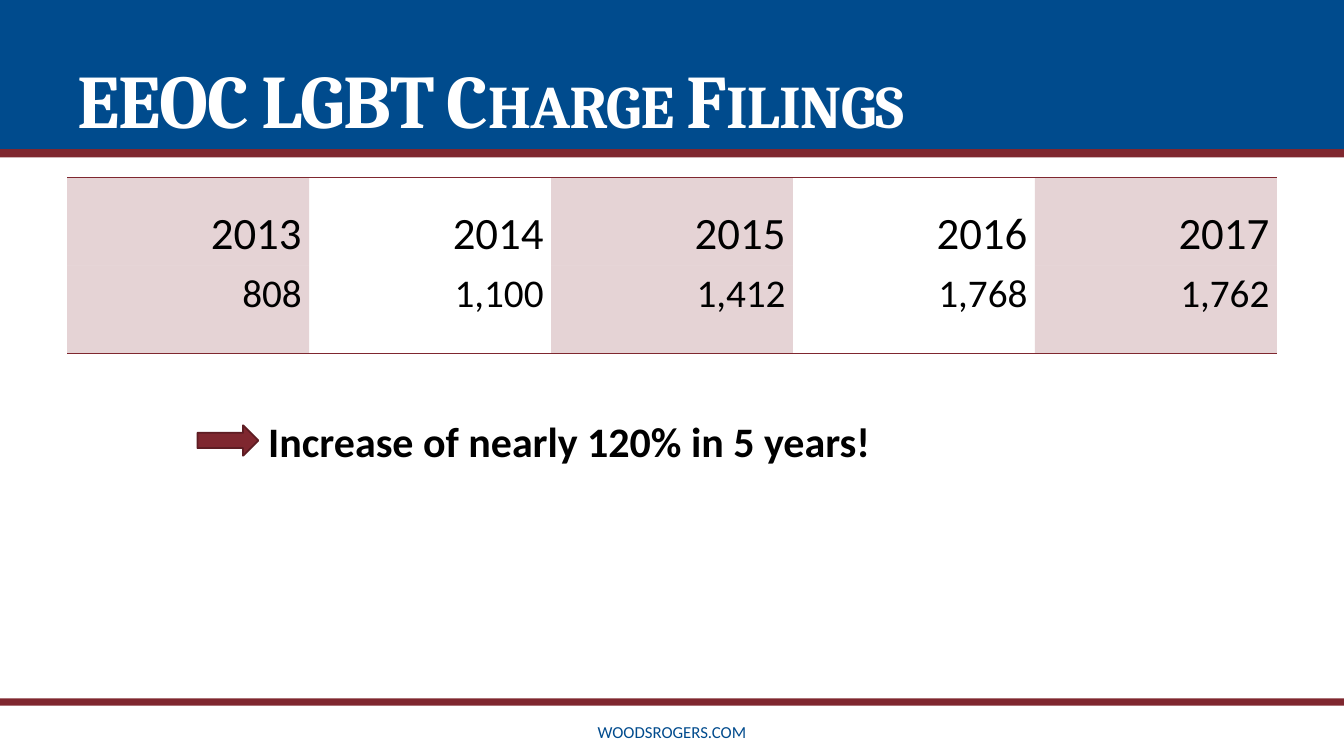
from lxml import etree
from pptx import Presentation
from pptx.dml.color import RGBColor
from pptx.enum.shapes import MSO_SHAPE as Shape
from pptx.enum.text import MSO_ANCHOR as Anchor, MSO_AUTO_SIZE as Fit, PP_ALIGN as Align
from pptx.oxml.ns import qn
from pptx.util import Emu, Pt

PX = 9525
WIDE, HIGH = 1280, 720
BLUE = RGBColor(0x00, 0x4B, 0x8D)
RED = RGBColor(0x7F, 0x27, 0x2F)
DARK = RGBColor(0x5E, 0x1D, 0x23)
WHITE = RGBColor(0xFF, 0xFF, 0xFF)
BLACK = RGBColor(0x00, 0x00, 0x00)
PLAIN = "{2D5ABB26-0587-4C30-8999-92F81FD0307C}"
FILINGS = [("2013", "808"), ("2014", "1,100"), ("2015", "1,412"),
           ("2016", "1,768"), ("2017", "1,762")]


def px(*sizes):
    return [Emu(size * PX) for size in sizes]


def add_run(para, text, size, color, face="Calibri", bold=False):
    run = para.add_run()
    run.text = text
    font = run.font
    font.name, font.size, font.bold = face, Pt(size), bold
    font.color.rgb = color
    return run


def add_block(slide, box, color, kind=Shape.RECTANGLE):
    block = slide.shapes.add_shape(kind, *px(*box))
    block.shadow.inherit = False
    block.fill.solid()
    block.fill.fore_color.rgb = color
    block.line.fill.background()
    return block


def add_label(slide, box, text, size, color, align, anchor, bold=False):
    frame = slide.shapes.add_textbox(*px(*box)).text_frame
    frame.word_wrap = True
    frame.vertical_anchor = anchor
    para = frame.paragraphs[0]
    para.alignment = align
    add_run(para, text, size, color, bold=bold)


def add_header(slide, box, text):
    left, top, width, height = box
    add_block(slide, box, BLUE)
    add_block(slide, (left, top + height, width, 8), RED)
    title = slide.shapes.title
    title.left, title.top, title.width, title.height = px(left + 64, top, width - 128, height)
    frame = title.text_frame
    frame.auto_size = Fit.NONE
    frame.vertical_anchor = Anchor.BOTTOM
    para = frame.paragraphs[0]
    para.alignment = Align.LEFT
    para.line_spacing = 0.85
    run = add_run(para, text, 54, WHITE, "Cambria", True)
    props = run._r.get_or_add_rPr()
    props.set("cap", "small")
    props.set("spc", "-50")
    tree = slide.shapes._spTree
    tree.append(title._element)  # bring the title in front of its band


def add_rule(cell, side):
    """Draw a red border on one side (lnT or lnB) of a cell."""
    line = etree.Element(qn("a:" + side), w=str(Pt(1)))
    fill = etree.SubElement(line, qn("a:solidFill"))
    etree.SubElement(fill, qn("a:srgbClr"), val=str(RED))
    cell._tc.get_or_add_tcPr().insert(0, line)


def tint(cell):
    cell.fill.solid()
    cell.fill.fore_color.rgb = RED
    color = cell._tc.tcPr.find(".//" + qn("a:srgbClr"))
    etree.SubElement(color, qn("a:alpha"), val="20000")


def add_grid(slide, box, data):
    frame = slide.shapes.add_table(2, len(data), *px(*box))
    table = frame.table
    table.first_row = table.horz_banding = False
    frame._element.find(".//" + qn("a:tableStyleId")).text = PLAIN
    looks = [(32, Anchor.BOTTOM, "lnT"), (28, Anchor.TOP, "lnB")]
    for col, pair in enumerate(data):
        for row, (text, (size, anchor, side)) in enumerate(zip(pair, looks)):
            cell = table.cell(row, col)
            cell.margin_left, cell.margin_right = px(7, 7)
            cell.margin_top, cell.margin_bottom = px(4, 4)
            cell.vertical_anchor = anchor
            if col % 2:
                cell.fill.background()
            else:
                tint(cell)
            add_rule(cell, side)
            para = cell.text_frame.paragraphs[0]
            para.alignment = Align.RIGHT
            add_run(para, text, size, BLACK)


def add_callout(slide, box, text):
    left, top, width, height = box
    add_label(slide, (left + 58, top, width - 58, height), text, 30, BLACK,
              Align.LEFT, Anchor.TOP, True)
    arrow = add_block(slide, (left, top + 14, 58, 29), RED, Shape.RIGHT_ARROW)
    arrow.line.color.rgb = DARK
    arrow.line.width = Pt(1.25)


def add_footer(slide, box, text):
    left, top, width, height = box
    add_block(slide, (left, top, width, 7), RED)
    add_label(slide, (left + 387, top + 13, width - 774, 38), text, 12, BLUE,
              Align.CENTER, Anchor.MIDDLE)


def main():
    deck = Presentation()
    deck.slide_width, deck.slide_height = px(WIDE, HIGH)
    slide = deck.slides.add_slide(deck.slide_layouts[5])
    add_header(slide, (0, 0, WIDE, 142), "EEOC LGBT Charge Filings")
    add_grid(slide, (64, 169, 1152, 168), FILINGS)
    add_callout(slide, (188, 391, 885, 59), "Increase of nearly 120% in 5 years!")
    add_footer(slide, (0, 665, WIDE, 55), "WOODSROGERS.COM")
    deck.save("out.pptx")


if __name__ == "__main__":
    main()
